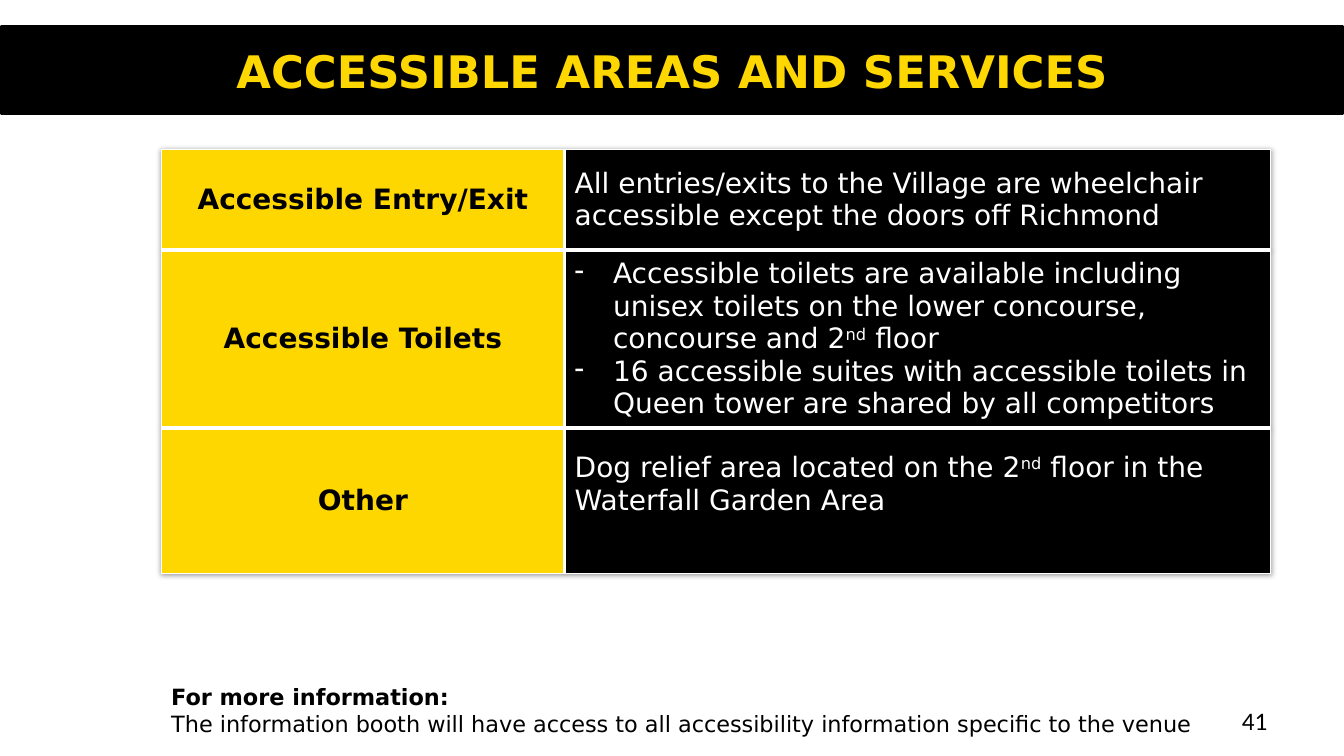
"""Build the accessible areas and services slide."""
from lxml import etree
from pptx import Presentation
from pptx.dml.color import RGBColor
from pptx.enum.shapes import MSO_SHAPE
from pptx.enum.text import MSO_ANCHOR, PP_ALIGN
from pptx.oxml.ns import qn
from pptx.util import Inches, Pt

RECT = MSO_SHAPE.RECTANGLE
MIDDLE, TOP = MSO_ANCHOR.MIDDLE, MSO_ANCHOR.TOP
LEFT, CENTER, RIGHT = PP_ALIGN.LEFT, PP_ALIGN.CENTER, PP_ALIGN.RIGHT

TITLE = "ACCESSIBLE AREAS AND SERVICES"
PAGE = "41"
SERVICES = [
    {"name": "Accessible Entry/Exit", "height": 1, "bullet": False, "details": [
        ["All entries/exits to the Village are wheelchair accessible "
         "except the doors off Richmond"]]},
    {"name": "Accessible Toilets", "height": 1, "bullet": True, "details": [
        ["Accessible toilets are available including unisex toilets on the "
         "lower concourse, concourse and 2", ("nd", "super"), " floor"],
        ["16 accessible suites with accessible toilets in Queen tower "
         "are shared by all competitors"]]},
    {"name": "Other", "height": 1.44, "bullet": False, "bottom": 0.38, "details": [
        ["Dog relief area located on the 2", ("nd", "super"),
         " floor in the Waterfall Garden Area"]]},
]
CONTACT = [[("For more information:", "bold"), "\n",
            "The information booth will have access to all accessibility "
            "information specific to the venue"]]

THEME = {
    "black": RGBColor.from_string("000000"),
    "white": RGBColor.from_string("FFFFFF"),
    "gold": RGBColor.from_string("FFD700"),
    "font": "DejaVu Sans", "page_font": "Calibri",
    "title": 32, "table": 20, "page": 18, "contact": 16,
    "outer": 1, "inner": 3,
}
COLUMNS = [4, 7]
INDENT = Inches(0.38)


def write(tf, paragraphs, size, color=THEME["black"], font=THEME["font"],
          bold=False, align=LEFT, bullet=False):
    """Fill a text frame with paragraphs made of plain or styled pieces."""
    tf.word_wrap = True
    for i, pieces in enumerate(paragraphs):
        p = tf.paragraphs[0] if i == 0 else tf.add_paragraph()
        p.alignment = align
        if bullet:
            pPr = p._p.get_or_add_pPr()
            pPr.set("marL", str(INDENT))
            pPr.set("indent", str(-INDENT))
            etree.SubElement(pPr, qn("a:buChar")).set("char", "-")
        for piece in pieces:
            if piece == "\n":
                p.add_line_break()
                continue
            text, style = piece if isinstance(piece, tuple) else (piece, "")
            r = p.add_run()
            r.text = text
            r.font.name, r.font.size = font, Pt(size)
            r.font.bold = bold or style == "bold"
            r.font.color.rgb = color
            if style == "super":
                r._r.get_or_add_rPr().set("baseline", "30000")


def add_text(s, box, paragraphs, size, anchor=TOP, **fmt):
    """Add a text box."""
    tf = s.shapes.add_textbox(*map(Inches, box)).text_frame
    tf.vertical_anchor = anchor
    write(tf, paragraphs, size, **fmt)


def add_title(s):
    """Place the title over its black band."""
    band = s.shapes.add_shape(RECT, *map(Inches, (0.01, 0.26, 13.31, 0.87)))
    band.shadow.inherit = False
    band.fill.solid()
    band.fill.fore_color.rgb = band.line.color.rgb = THEME["black"]
    band.line.width = Pt(2)
    s.shapes._spTree.insert(2, band._element)
    title = s.shapes.title
    title.left, title.top, title.width, title.height = map(
        Inches, (0.67, 0.27, 12, 0.86))
    title.text_frame.vertical_anchor = MIDDLE
    write(title.text_frame, [[TITLE]], THEME["title"], THEME["gold"],
          bold=True, align=CENTER)


def set_borders(cell, row, col):
    """Draw thin white lines outside the grid and thick ones inside."""
    tcPr = cell._tc.get_or_add_tcPr()
    outside = {"L": col == 0, "R": col == len(COLUMNS) - 1,
               "T": row == 0, "B": row == len(SERVICES) - 1}
    for i, (side, outer) in enumerate(outside.items()):
        ln = etree.Element(qn(f"a:ln{side}"))
        ln.set("w", str(Pt(THEME["outer" if outer else "inner"])))
        fill = etree.SubElement(ln, qn("a:solidFill"))
        etree.SubElement(fill, qn("a:srgbClr")).set("val", str(THEME["white"]))
        tcPr.insert(i, ln)


def add_table_shadow(table):
    """Give the table a soft shadow."""
    effects = etree.Element(qn("a:effectLst"))
    shadow = etree.SubElement(effects, qn("a:outerShdw"), blurRad="50800",
                              dist="12700", dir="5400000", rotWithShape="0")
    color = etree.SubElement(shadow, qn("a:srgbClr"), val=str(THEME["black"]))
    etree.SubElement(color, qn("a:alpha"), val="38000")
    table._tbl.tblPr.insert(0, effects)


def add_services(s):
    """Add the table of services."""
    height = sum(service["height"] for service in SERVICES)
    table = s.shapes.add_table(
        len(SERVICES), len(COLUMNS), Inches(1.6), Inches(1.48),
        Inches(sum(COLUMNS)), Inches(height)).table
    table.first_row = table.horz_banding = False
    add_table_shadow(table)
    for column, width in zip(table.columns, COLUMNS):
        column.width = Inches(width)
    for row, service in enumerate(SERVICES):
        table.rows[row].height = Inches(service["height"])
        cells = [
            ([[service["name"]]], THEME["gold"],
             {"color": THEME["black"], "bold": True, "align": CENTER}),
            (service["details"], THEME["black"],
             {"color": THEME["white"], "bullet": service["bullet"]}),
        ]
        for col, (paragraphs, fill, fmt) in enumerate(cells):
            cell = table.cell(row, col)
            cell.vertical_anchor = MIDDLE
            cell.fill.solid()
            cell.fill.fore_color.rgb = fill
            set_borders(cell, row, col)
            write(cell.text_frame, paragraphs, THEME["table"], **fmt)
        cell.margin_bottom = Inches(service.get("bottom", 0.05))


def main():
    """Create and save the slide."""
    prs = Presentation()
    prs.slide_width, prs.slide_height = Inches(13.33), Inches(7.5)
    s = prs.slides.add_slide(prs.slide_layouts[5])
    add_title(s)
    add_text(s, (9.56, 6.95, 3.11, 0.4), [[PAGE]], THEME["page"], MIDDLE,
             font=THEME["page_font"], align=RIGHT)
    add_services(s)
    add_text(s, (1.6, 6.73, 10.35, 0.64), CONTACT, THEME["contact"])
    prs.save("out.pptx")


if __name__ == "__main__":
    main()
